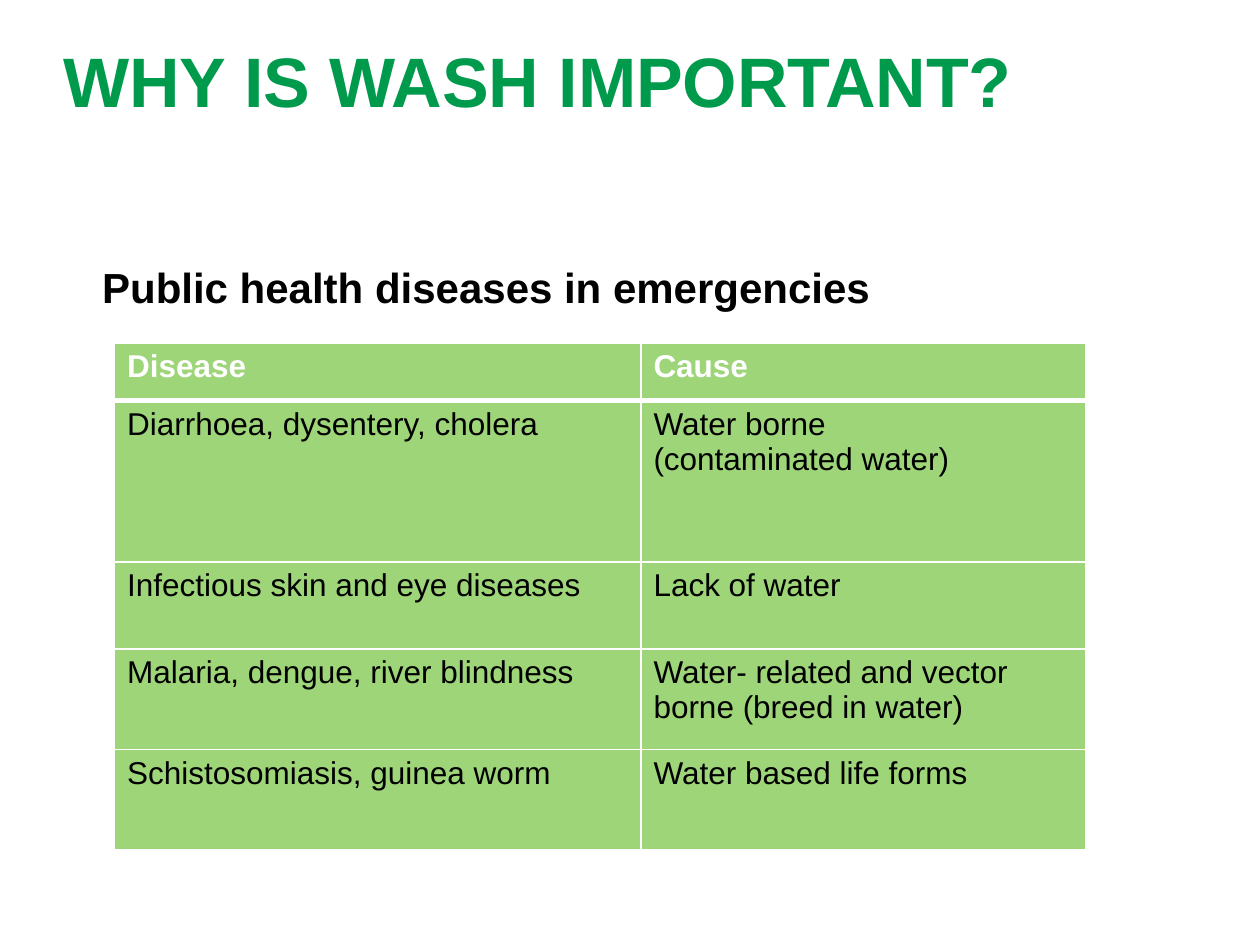
from lxml import etree
from pptx import Presentation
from pptx.dml.color import RGBColor
from pptx.enum.text import MSO_ANCHOR, MSO_AUTO_SIZE, PP_ALIGN
from pptx.oxml.ns import qn
from pptx.util import Cm, Pt

TOP, LEFT, NO_FIT = MSO_ANCHOR.TOP, PP_ALIGN.LEFT, MSO_AUTO_SIZE.NONE
GREEN = RGBColor(0x00, 0x9A, 0x4C)
CELL_GREEN = RGBColor(0x9E, 0xD5, 0x79)
WHITE = RGBColor(0xFF, 0xFF, 0xFF)
BLACK = RGBColor(0x00, 0x00, 0x00)
FONT = "Arial"

# Content: each cell is a list of paragraphs
TITLE = "WHY IS WASH IMPORTANT?"
SUBTITLE = "Public health diseases in emergencies"
ROWS = [
    (["Disease"], ["Cause"]),
    (["Diarrhoea, dysentery, cholera"], ["Water borne", "(contaminated water)"]),
    (["Infectious skin and eye diseases"], ["Lack of water"]),
    (["Malaria, dengue, river blindness"],
     ["Water- related and vector borne (breed in water)"]),
    (["Schistosomiasis, guinea worm"], ["Water based life forms"]),
]
COL_WIDTHS = (10.61, 8.97)
ROW_HEIGHTS = (1.17, 3.25, 1.75, 2.03, 2.03)


def add_run(p, text, size, color, bold):
    r = p.add_run()
    r.text = text
    r.font.name = FONT
    r.font.size = Pt(size)
    r.font.bold = bold
    r.font.color.rgb = color


def place(sp, left, top, width, height, inset_top=0):
    sp.left, sp.top, sp.width, sp.height = Cm(left), Cm(top), Cm(width), Cm(height)
    tf = sp.text_frame
    tf.auto_size = NO_FIT
    tf.word_wrap = True
    tf.vertical_anchor = TOP
    tf.margin_left = tf.margin_right = tf.margin_bottom = 0
    tf.margin_top = Cm(inset_top)
    p = tf.paragraphs[0]
    p.alignment = LEFT
    p.space_before = Pt(0)
    return p


def set_borders(cell, top, bottom):
    tc_pr = cell._tc.get_or_add_tcPr()
    sides = (("a:lnL", 1), ("a:lnR", 1), ("a:lnT", top), ("a:lnB", bottom))
    for i, (tag, width) in enumerate(sides):
        ln = etree.Element(qn(tag), w=str(Pt(width)))
        fill = etree.SubElement(ln, qn("a:solidFill"))
        etree.SubElement(fill, qn("a:srgbClr"), val=str(WHITE))
        tc_pr.insert(i, ln)


prs = Presentation()
prs.slide_width, prs.slide_height = Cm(25.4), Cm(19.05)
s = prs.slides.add_slide(prs.slide_layouts[1])

# Title
p = place(s.shapes.title, 1.27, 0.76, 22.86, 2.62)
p.line_spacing = Pt(48)
add_run(p, TITLE, 40, GREEN, True)

# Subtitle in the body placeholder, without a bullet
p = place(s.placeholders[1], 2.06, 4.27, 22.81, 14.07, inset_top=1.08)
p.line_spacing = 0.95
p_pr = p._p.get_or_add_pPr()
p_pr.set("marL", "0")
p_pr.set("indent", "0")
etree.SubElement(p_pr, qn("a:buNone"))
add_run(p, SUBTITLE, 24, BLACK, True)

# Disease table
table = s.shapes.add_table(len(ROWS), len(COL_WIDTHS), Cm(2.31), Cm(6.91),
                           Cm(sum(COL_WIDTHS)), Cm(sum(ROW_HEIGHTS))).table
for col, width in zip(table.columns, COL_WIDTHS):
    col.width = Cm(width)
for i, (row, height) in enumerate(zip(ROWS, ROW_HEIGHTS)):
    table.rows[i].height = Cm(height)
    header = i == 0
    for j, lines in enumerate(row):
        cell = table.cell(i, j)
        cell.fill.solid()
        cell.fill.fore_color.rgb = CELL_GREEN
        set_borders(cell, top=3 if i == 1 else 1, bottom=3 if header else 1)
        tf = cell.text_frame
        for k, line in enumerate(lines):
            p = tf.add_paragraph() if k else tf.paragraphs[0]
            add_run(p, line, 18, WHITE if header else BLACK, header)

prs.save("out.pptx")
